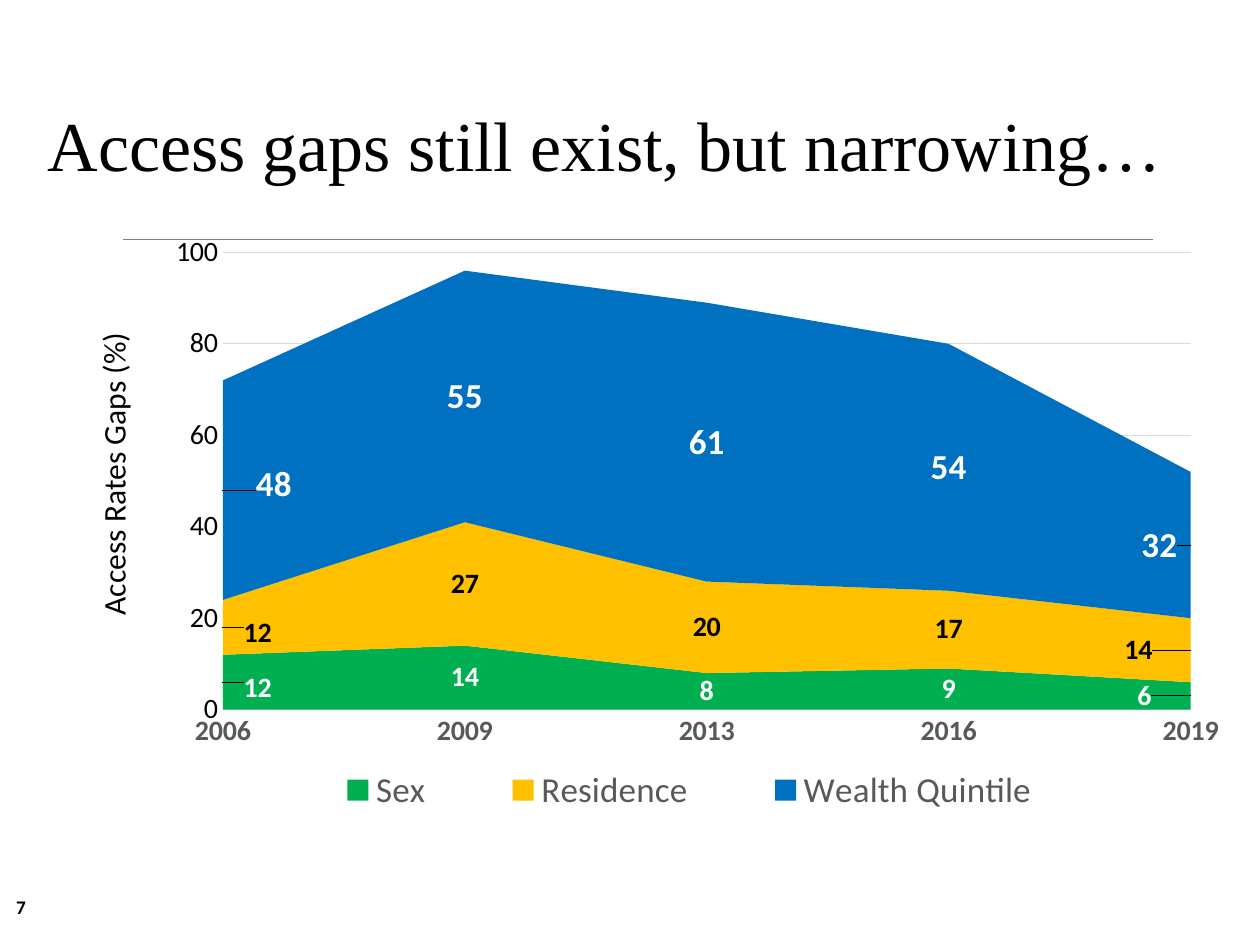
from dataclasses import dataclass

from lxml import etree
from pptx import Presentation
from pptx import util as u
from pptx.chart import data
from pptx.dml.color import RGBColor
from pptx.enum import chart as kinds
from pptx.enum import shapes, text
from pptx.oxml import ns

BLACK = RGBColor(0, 0, 0)
WHITE = RGBColor(255, 255, 255)
GRAY = RGBColor(0x59, 0x59, 0x59)
PALE = RGBColor(0xD9, 0xD9, 0xD9)
RULE = RGBColor(0x80, 0x80, 0x80)
GREEN = RGBColor(0x00, 0xB0, 0x50)
GOLD = RGBColor(0xFF, 0xC0, 0x00)
BLUE = RGBColor(0x00, 0x70, 0xC0)

WIDE, HIGH = u.Inches(10), u.Inches(7.5)
YEARS = ("2006", "2009", "2013", "2016", "2019")


@dataclass
class Box:
    x: float
    y: float
    w: float
    h: float

    def place(self) -> tuple:
        return (int(WIDE * self.x), int(HIGH * self.y),
                int(WIDE * self.w), int(HIGH * self.h))


@dataclass
class Label:
    box: Box
    words: str
    size: int
    face: str
    bold: bool = False


@dataclass
class Band:
    name: str
    vals: tuple
    fill: RGBColor
    ink: RGBColor
    size: int
    shifts: dict


LABELS = (
    Label(Box(0.028, 0.101, 0.953, 0.103),
          "Access gaps still exist, but narrowing…", 40, "Times New Roman"),
    Label(Box(0.003, 0.941, 0.037, 0.053), "7", 11, "Calibri", True),
)
BANDS = (
    Band("Sex", (12, 14, 8, 9, 6), GREEN, WHITE, 16,
         {0: (0.03, 0.01), 4: (-0.04, 0)}),
    Band("Residence", (12, 27, 20, 17, 14), GOLD, BLACK, 16,
         {0: (0.03, 0.01), 4: (-0.045, 0)}),
    Band("Wealth Quintile", (48, 55, 61, 54, 32), BLUE, WHITE, 20,
         {0: (0.044, -0.01), 4: (-0.027, 0)}),
)


def style(font, size: int, ink: RGBColor, bold: bool = False,
          face: str = "Calibri") -> None:
    font.size, font.bold, font.name = u.Pt(size), bold, face
    font.color.rgb = ink


def arrange(node, index: int, **parts) -> None:
    for old in node.findall(ns.qn("c:layout")):
        node.remove(old)
    layout = etree.Element(ns.qn("c:layout"))
    manual = etree.SubElement(layout, ns.qn("c:manualLayout"))
    for tag, val in parts.items():
        etree.SubElement(manual, ns.qn("c:" + tag)).set("val", str(val))
    node.insert(index, layout)


def write(slide, label: Label) -> None:
    frame = slide.shapes.add_textbox(*label.box.place()).text_frame
    frame.word_wrap = True
    frame.text = label.words
    style(frame.paragraphs[0].runs[0].font, label.size, BLACK,
          label.bold, label.face)


def rule(slide, left: float, right: float, y: float) -> None:
    line = slide.shapes.add_connector(
        shapes.MSO_CONNECTOR.STRAIGHT, int(WIDE * left), int(HIGH * y),
        int(WIDE * right), int(HIGH * y))
    line.line.color.rgb, line.line.width = RULE, u.Pt(0.5)
    etree.SubElement(line._element.spPr, ns.qn("a:effectLst"))


def paint(series, band: Band) -> None:
    series.format.fill.solid()
    series.format.fill.fore_color.rgb = band.fill
    series.format.line.fill.background()
    labels = series.data_labels
    labels.show_value = True
    style(labels.font, band.size, band.ink, True)
    for spot, (dx, dy) in band.shifts.items():
        style(series.points[spot].data_label.font, band.size, band.ink, True)
        node = series._element.xpath(
            f"c:dLbls/c:dLbl[c:idx/@val='{spot}']")[0]
        arrange(node, 1, x=dx, y=dy)


def axes(chart) -> None:
    cat, val = chart.category_axis, chart.value_axis
    for axis in (cat, val):
        axis.major_tick_mark = axis.minor_tick_mark = kinds.XL_TICK_MARK.NONE
    style(cat.tick_labels.font, 16, GRAY, True)
    cat.has_major_gridlines = False
    style(val.tick_labels.font, 16, BLACK)
    val.minimum_scale, val.maximum_scale, val.major_unit = 0, 100, 20
    val.has_major_gridlines = True
    for line in (cat.format.line, val.major_gridlines.format.line):
        line.color.rgb, line.width = PALE, u.Pt(0.75)
    val.format.line.fill.background()
    val._element.find(ns.qn("c:crossBetween")).set("val", "midCat")
    title = val.axis_title
    title.text_frame.text = "Access Rates Gaps (%)"
    style(title.text_frame.paragraphs[0].runs[0].font, 18, BLACK)
    body = title.text_frame._txBody.bodyPr
    body.set("rot", "-5400000")
    body.set("vert", "horz")
    arrange(title._element, 1, xMode="edge", yMode="edge", x=0.01, y=0.17)


def graph(slide, box: Box) -> None:
    table = data.CategoryChartData()
    table.categories = YEARS
    for band in BANDS:
        table.add_series(band.name, band.vals)
    chart = slide.shapes.add_chart(
        kinds.XL_CHART_TYPE.AREA_STACKED, *box.place(), table).chart
    chart.has_title = False
    style(chart.font, 10, BLACK)
    for series, band in zip(chart.plots[0].series, BANDS):
        paint(series, band)
    axes(chart)
    arrange(chart._chartSpace.chart.plotArea, 0, layoutTarget="inner",
            xMode="edge", yMode="edge", x=0.128, y=0.047, w=0.834, h=0.755)
    chart.has_legend = True
    legend = chart.legend
    legend.position = kinds.XL_LEGEND_POSITION.BOTTOM
    legend.include_in_layout = False
    style(legend.font, 20, GRAY)
    arrange(legend._element, 1, xMode="edge", yMode="edge",
            x=0.17, y=0.89, w=0.72, h=0.09)


def main() -> None:
    deck = Presentation()
    deck.slide_width, deck.slide_height = WIDE, HIGH
    slide = deck.slides.add_slide(deck.slide_layouts[6])
    rule(slide, 0.098, 0.915, 0.253)
    graph(slide, Box(0.059, 0.237, 0.921, 0.641))
    for label in LABELS:
        write(slide, label)
    slide.shapes[2].text_frame.auto_size = text.MSO_AUTO_SIZE.SHAPE_TO_FIT_TEXT
    deck.save("out.pptx")


if __name__ == "__main__":
    main()
